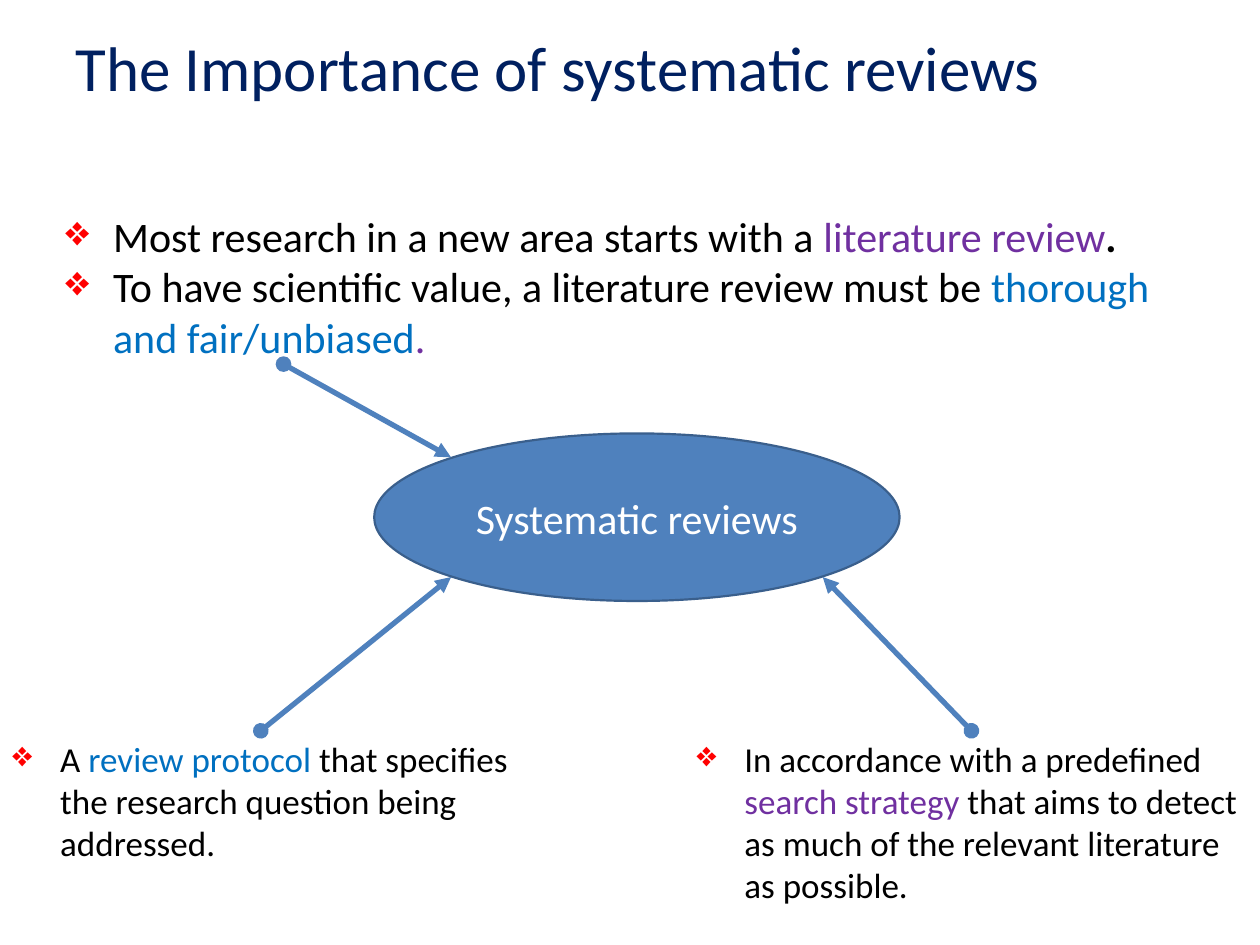
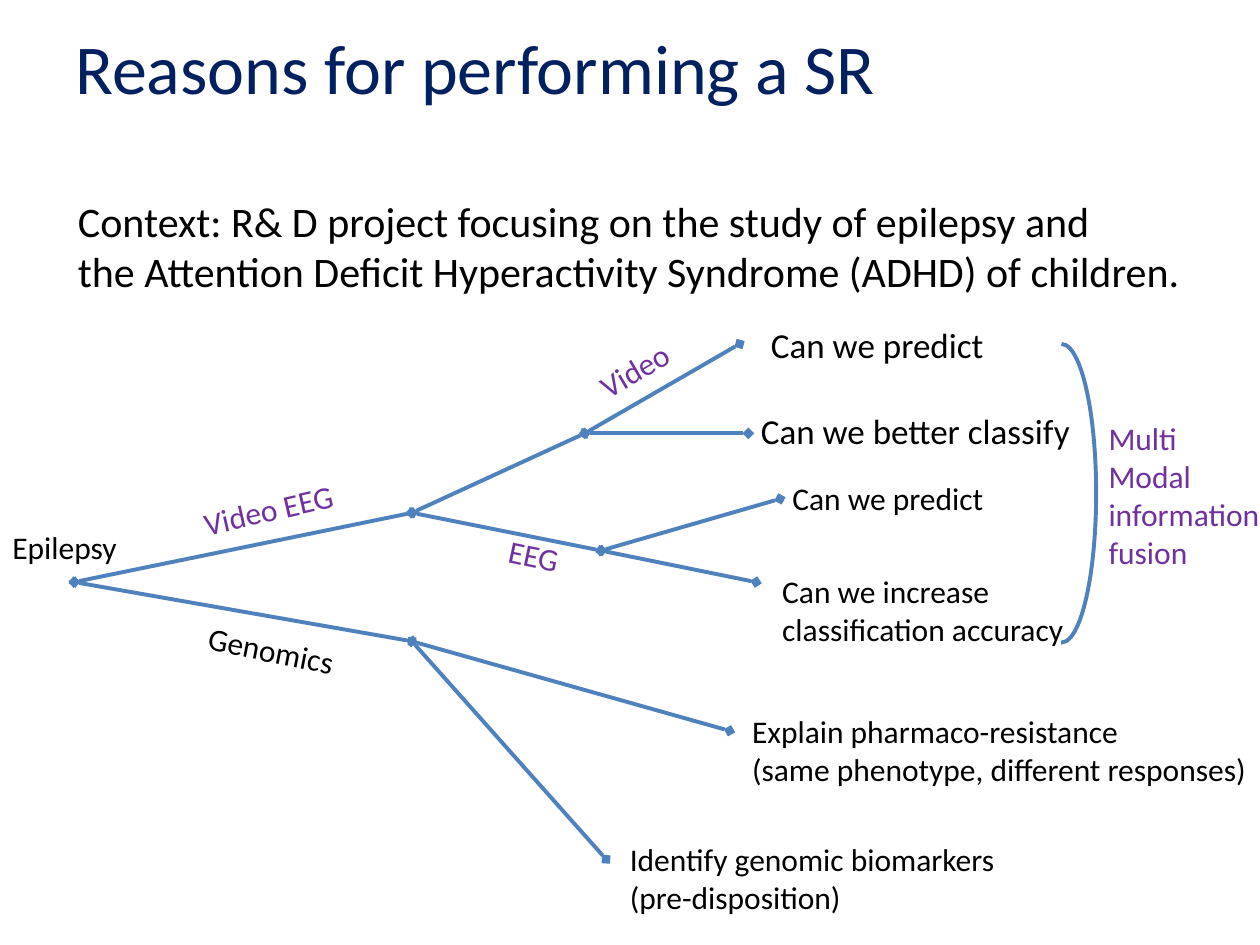
import pptx
import pptx.dml.color
import pptx.enum.shapes
import pptx.enum.text
import pptx.oxml.ns
import pptx.util
from lxml import etree

Inches = pptx.util.Inches
Pt = pptx.util.Pt
RGBColor = pptx.dml.color.RGBColor
MSO_SHAPE = pptx.enum.shapes.MSO_SHAPE
MSO_ANCHOR = pptx.enum.text.MSO_ANCHOR
qn = pptx.oxml.ns.qn

FONT = "Calibri"
NAVY = RGBColor(0x00, 0x20, 0x60)
BLACK = RGBColor(0x00, 0x00, 0x00)
WHITE = RGBColor(0xFF, 0xFF, 0xFF)
RED = RGBColor(0xFF, 0x00, 0x00)
PURPLE = RGBColor(0x70, 0x30, 0xA0)
SKY = RGBColor(0x00, 0x70, 0xC0)
BLUE = RGBColor(0x4F, 0x81, 0xBD)
DARK_BLUE = RGBColor(0x3A, 0x5F, 0x8C)


def add_run(p, text, size, color=BLACK, bold=False):
    r = p.add_run()
    r.text = text
    r.font.name = FONT
    r.font.size = Pt(size)
    r.font.color.rgb = color
    r.font.bold = bold


def add_bullet(p):
    pPr = p._p.get_or_add_pPr()
    pPr.set("marL", str(Inches(0.38)))
    pPr.set("indent", str(Inches(-0.38)))
    color = etree.SubElement(pPr, qn("a:buClr"))
    etree.SubElement(color, qn("a:srgbClr"), val=str(RED))
    etree.SubElement(pPr, qn("a:buChar"), char="❖")


def add_text(slide, box, paragraphs, size, wrap=True, bullets=False, rotation=0):
    sp = slide.shapes.add_textbox(*map(Inches, box))
    sp.rotation = rotation
    tf = sp.text_frame
    tf.word_wrap = wrap
    for i, runs in enumerate(paragraphs):
        p = tf.add_paragraph() if i else tf.paragraphs[0]
        if bullets:
            add_bullet(p)
        for run in runs:
            add_run(p, run[0], size, *run[1:])
    return sp


def add_label(slide, box, lines, size=18, color=BLACK, rotation=0):
    paragraphs = [[(line, color)] for line in lines]
    add_text(slide, box, paragraphs, size, wrap=False, rotation=rotation)


def add_title(slide, text, size):
    sp = add_text(slide, (0.5, 0.13, 8.99, 0.79), [[(text, NAVY)]], size)
    sp.text_frame.vertical_anchor = MSO_ANCHOR.MIDDLE


def add_line(slide, start, end, width, head, tail):
    straight = pptx.enum.shapes.MSO_CONNECTOR.STRAIGHT
    line = slide.shapes.add_connector(straight, *map(Inches, start + end))
    line.line.color.rgb = BLUE
    line.line.width = Pt(width)
    ln = line.line._get_or_add_ln()
    etree.SubElement(ln, qn("a:headEnd"), type=head)
    etree.SubElement(ln, qn("a:tailEnd"), type=tail)
    etree.SubElement(line._element.spPr, qn("a:effectLst"))


def add_ellipse(slide, box, text):
    sp = slide.shapes.add_shape(MSO_SHAPE.OVAL, *map(Inches, box))
    sp.shadow.inherit = False
    sp.fill.solid()
    sp.fill.fore_color.rgb = BLUE
    sp.line.color.rgb = DARK_BLUE
    sp.line.width = Pt(1.25)
    tf = sp.text_frame
    tf.vertical_anchor = MSO_ANCHOR.MIDDLE
    p = tf.paragraphs[0]
    p.alignment = pptx.enum.text.PP_ALIGN.CENTER
    add_run(p, text, 24, WHITE)


def add_arc(slide, box):
    sp = slide.shapes.add_shape(MSO_SHAPE.ARC, *map(Inches, box))
    sp.shadow.inherit = False
    sp.adjustments[0] = 162
    sp.adjustments[1] = 54.1
    sp.fill.background()
    sp.line.color.rgb = BLUE
    sp.line.width = Pt(2.25)


def build_importance(slide):
    add_title(slide, "The Importance of systematic reviews", 36)
    add_text(slide, (0.42, 1.62, 9.17, 1.31), [
        [("Most research in a new area starts with a ",),
         ("literature review", PURPLE), (".", BLACK, True)],
        [("To have scientific value, a literature review must be ",),
         ("thorough and fair/unbiased", SKY), (".", PURPLE)],
    ], 24, bullets=True)
    add_ellipse(slide, (2.97, 3.44, 4.17, 1.33), "Systematic reviews")
    add_text(slide, (0, 5.8, 4.14, 1.11), [
        [("A ",), ("review protocol ", SKY),
         ("that specifies the research question being addressed.",)],
    ], 20, bullets=True)
    add_text(slide, (5.43, 5.8, 4.57, 1.45), [
        [("In accordance with a predefined ",), ("search strategy ", PURPLE),
         ("that aims to detect as much of the relevant literature as possible.",)],
    ], 20, bullets=True)
    for start, end in [((2.25, 2.89), (3.58, 3.63)),
                       ((7.71, 5.8), (6.53, 4.58)),
                       ((2.07, 5.8), (3.58, 4.58))]:
        add_line(slide, start, end, 3, "oval", "triangle")


def build_reasons(slide):
    add_title(slide, "Reasons for performing a SR", 40)
    add_text(slide, (0.52, 1.5, 9.13, 0.91), [
        [("Context: R& D project focusing on the study of epilepsy and",)],
        [("the Attention Deficit Hyperactivity Syndrome (ADHD) of children.",)],
    ], 24)

    epilepsy, video_eeg, genomics = (0.59, 4.62), (3.27, 4.07), (3.27, 5.09)
    video, eeg = (4.64, 3.44), (4.77, 4.37)
    branches = {
        epilepsy: [video_eeg, genomics],
        video_eeg: [video, eeg],
        video: [(5.87, 2.73), (5.94, 3.44)],
        eeg: [(6.19, 3.96), (6, 4.62)],
        genomics: [(4.81, 6.82), (5.79, 5.8)],
    }
    for parent, children in branches.items():
        for child in children:
            add_line(slide, parent, child, 2.25, "diamond", "diamond")

    add_label(slide, (0, 4.14, 1.04, 0.4), ["Epilepsy"])
    add_label(slide, (1.51, 3.84, 1.26, 0.4), ["Video EEG"], color=PURPLE, rotation=347.2)
    add_label(slide, (1.55, 4.96, 1.22, 0.4), ["Genomics"], rotation=11.1)
    add_label(slide, (4.64, 2.73, 0.8, 0.4), ["Video"], color=PURPLE, rotation=329.6)
    add_label(slide, (3.94, 4.21, 0.6, 0.4), ["EEG"], color=PURPLE, rotation=11.8)

    add_label(slide, (6.02, 2.52, 1.91, 0.44), ["Can we predict"], 20)
    add_label(slide, (5.94, 3.2, 2.69, 0.44), ["Can we better classify"], 20)
    add_label(slide, (6.19, 3.75, 1.74, 0.4), ["Can we predict"])
    add_label(slide, (6.11, 4.49, 2.46, 0.71), ["Can we increase", "classification accuracy"])
    add_label(slide, (5.87, 5.6, 4.18, 0.71),
              ["Explain pharmaco-resistance", "(same phenotype, different responses)"])
    add_label(slide, (4.9, 6.62, 3.13, 0.71),
              ["Identify genomic biomarkers", "(pre-disposition)"])

    add_arc(slide, (8.15, 2.73, 0.55, 2.37))
    add_label(slide, (8.7, 3.28, 1.47, 1.31),
              ["Multi", "Modal", "information", "fusion"], color=PURPLE)


def main():
    prs = pptx.Presentation()
    prs.slide_width = Inches(10)
    prs.slide_height = Inches(7.5)
    for build in (build_importance, build_reasons):
        build(prs.slides.add_slide(prs.slide_layouts[6]))
    prs.save("out.pptx")


if __name__ == "__main__":
    main()
